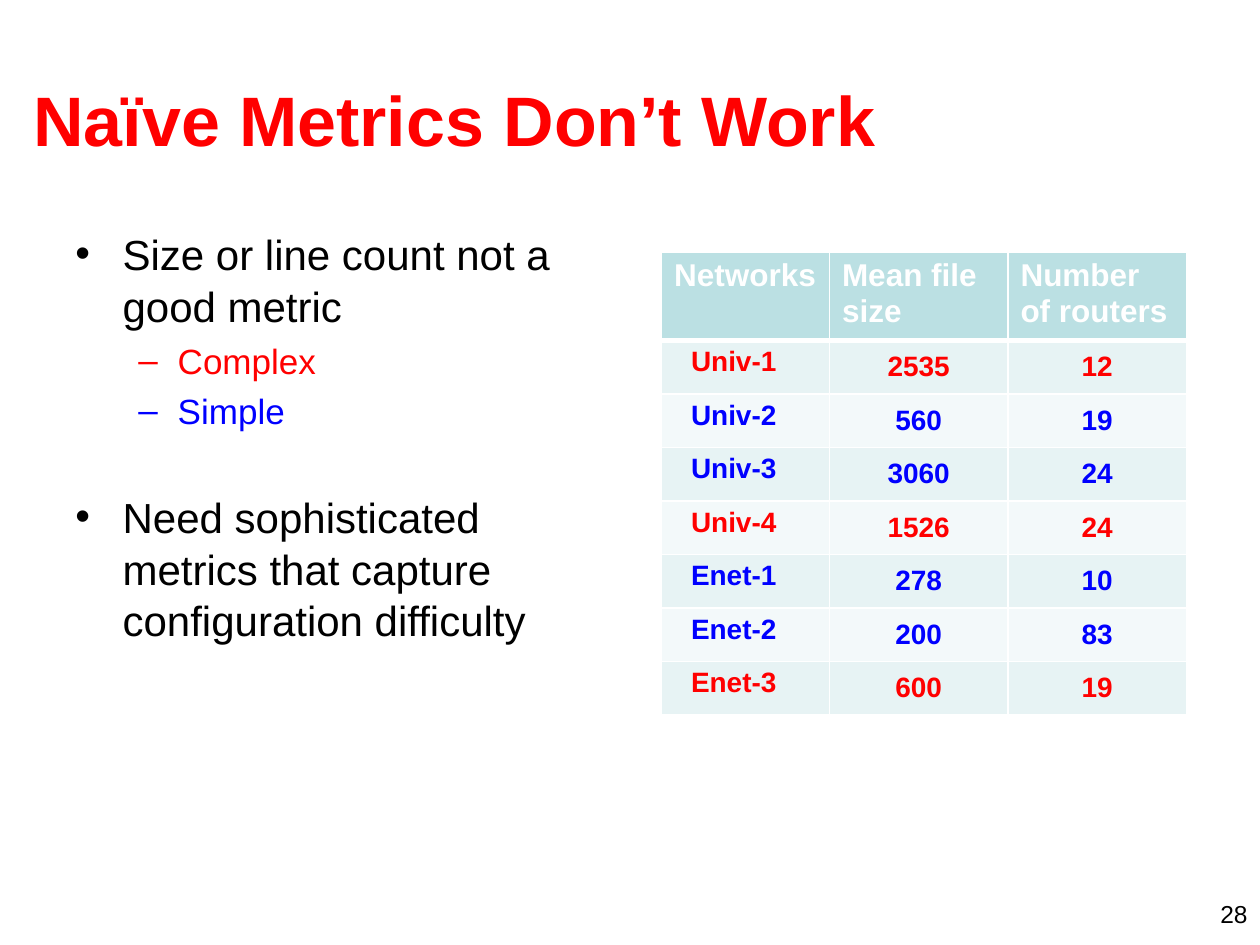
from pptx import Presentation
from pptx.dml.color import RGBColor
from pptx.enum.text import MSO_ANCHOR as Anchor, PP_ALIGN as Align
from pptx.oxml.ns import qn
from pptx.util import Pt
from lxml.etree import SubElement

RED = RGBColor(0xFF, 0x00, 0x00)
BLUE = RGBColor(0x00, 0x00, 0xFF)
BLACK = RGBColor(0x00, 0x00, 0x00)
WHITE = RGBColor(0xFF, 0xFF, 0xFF)
HEADER_FILL = RGBColor(0xBB, 0xE0, 0xE3)
BAND_FILLS = (RGBColor(0xE7, 0xF3, 0xF4), RGBColor(0xF3, 0xF9, 0xFA))

FONT = "Arial"
COLUMN_WIDTHS = (96, 102, 102)
HEADER_HEIGHT, ROW_HEIGHT = 48, 30.6
HEADERS = ("Networks", "Mean file size", "Number of routers")
NETWORKS = (
    ("Univ-1", "2535", "12", RED),
    ("Univ-2", "560", "19", BLUE),
    ("Univ-3", "3060", "24", BLUE),
    ("Univ-4", "1526", "24", RED),
    ("Enet-1", "278", "10", BLUE),
    ("Enet-2", "200", "83", BLUE),
    ("Enet-3", "600", "19", RED),
)

# text, level, colour, space before
BULLETS = (
    ("Size or line count not a good metric", 0, BLACK, 2),
    ("Complex", 1, RED, 5),
    ("Simple", 1, BLUE, 5),
    ("Need sophisticated metrics that capture configuration difficulty", 0, BLACK, 33),
)
# per level: character, left margin, hanging indent, size, line spacing
LEVELS = (("•", 27, 27, 24, 1.035), ("–", 58.5, 22.5, 20, 1.0))


def format_runs(paragraph, size, color, bold=False):
    for run in paragraph.runs:
        run.font.name = FONT
        run.font.size = Pt(size)
        run.font.bold = bold
        run.font.color.rgb = color


def add_text_frame(slide, left, top, width, height):
    box = slide.shapes.add_textbox(Pt(left), Pt(top), Pt(width), Pt(height))
    box.text_frame.word_wrap = True
    return box.text_frame


def add_title(slide, left, top, width, height):
    frame = add_text_frame(slide, left, top, width, height)
    frame.vertical_anchor = Anchor.MIDDLE
    frame.text = "Naïve Metrics Don’t Work"
    format_runs(frame.paragraphs[0], 40, RED, bold=True)


def add_bullets(slide, left, top, width, height):
    frame = add_text_frame(slide, left, top, width, height)
    for index, (text, level, color, space_before) in enumerate(BULLETS):
        character, margin, hanging, size, spacing = LEVELS[level]
        paragraph = frame.add_paragraph() if index else frame.paragraphs[0]
        paragraph.text = text
        paragraph.level = level
        paragraph.space_before = Pt(space_before)
        paragraph.line_spacing = spacing
        format_runs(paragraph, size, color)
        properties = paragraph._p.get_or_add_pPr()
        properties.set("marL", str(Pt(margin)))
        properties.set("indent", str(-Pt(hanging)))
        SubElement(properties, qn("a:buFont"), typeface=FONT)
        SubElement(properties, qn("a:buChar"), char=character)


def set_borders(cell, top, bottom):
    properties = cell._tc.get_or_add_tcPr()
    for side, width in (("L", 1), ("R", 1), ("T", top), ("B", bottom)):
        line = SubElement(properties, qn("a:ln" + side), w=str(Pt(width)))
        fill = SubElement(line, qn("a:solidFill"))
        SubElement(fill, qn("a:srgbClr"), val=str(WHITE))


def fill_cell(cell, text, size, color, fill, top=1, bottom=1):
    set_borders(cell, top, bottom)
    cell.fill.solid()
    cell.fill.fore_color.rgb = fill
    cell.text_frame.text = text
    format_runs(cell.text_frame.paragraphs[0], size, color, bold=True)


def add_network_table(slide, left, top, width, height):
    frame = slide.shapes.add_table(
        len(NETWORKS) + 1, len(HEADERS), Pt(left), Pt(top), Pt(width), Pt(height))
    table = frame.table
    for column, column_width in zip(table.columns, COLUMN_WIDTHS):
        column.width = Pt(column_width)
    for index, row in enumerate(table.rows):
        row.height = Pt(ROW_HEIGHT if index else HEADER_HEIGHT)

    # Header row
    for column, header in enumerate(HEADERS):
        fill_cell(table.cell(0, column), header, 18, WHITE, HEADER_FILL, bottom=3)

    # One row per network
    for row, (*values, color) in enumerate(NETWORKS, start=1):
        for column, value in enumerate(values):
            cell = table.cell(row, column)
            fill_cell(cell, value, 16, color, BAND_FILLS[(row - 1) % 2],
                      top=3 if row == 1 else 1)
            cell.text_frame.paragraphs[0].alignment = Align.CENTER
            if column:
                cell.vertical_anchor = Anchor.MIDDLE
            else:
                cell.margin_right = Pt(20.6)  # names sit left of centre


def add_page_number(slide, left, top, width, height):
    frame = add_text_frame(slide, left, top, width, height)
    frame.text = "28"
    frame.paragraphs[0].alignment = Align.RIGHT
    format_runs(frame.paragraphs[0], 14, BLACK)


def main():
    presentation = Presentation()
    presentation.slide_width, presentation.slide_height = Pt(720), Pt(540)
    slide = presentation.slides.add_slide(presentation.slide_layouts[6])
    add_title(slide, 12, 23, 690, 90)
    add_network_table(slide, 378, 144, sum(COLUMN_WIDTHS),
                      HEADER_HEIGHT + ROW_HEIGHT * len(NETWORKS))
    add_bullets(slide, 36, 126, 324, 356)
    add_page_number(slide, 552, 510, 168, 18)
    presentation.save("out.pptx")


if __name__ == "__main__":
    main()
